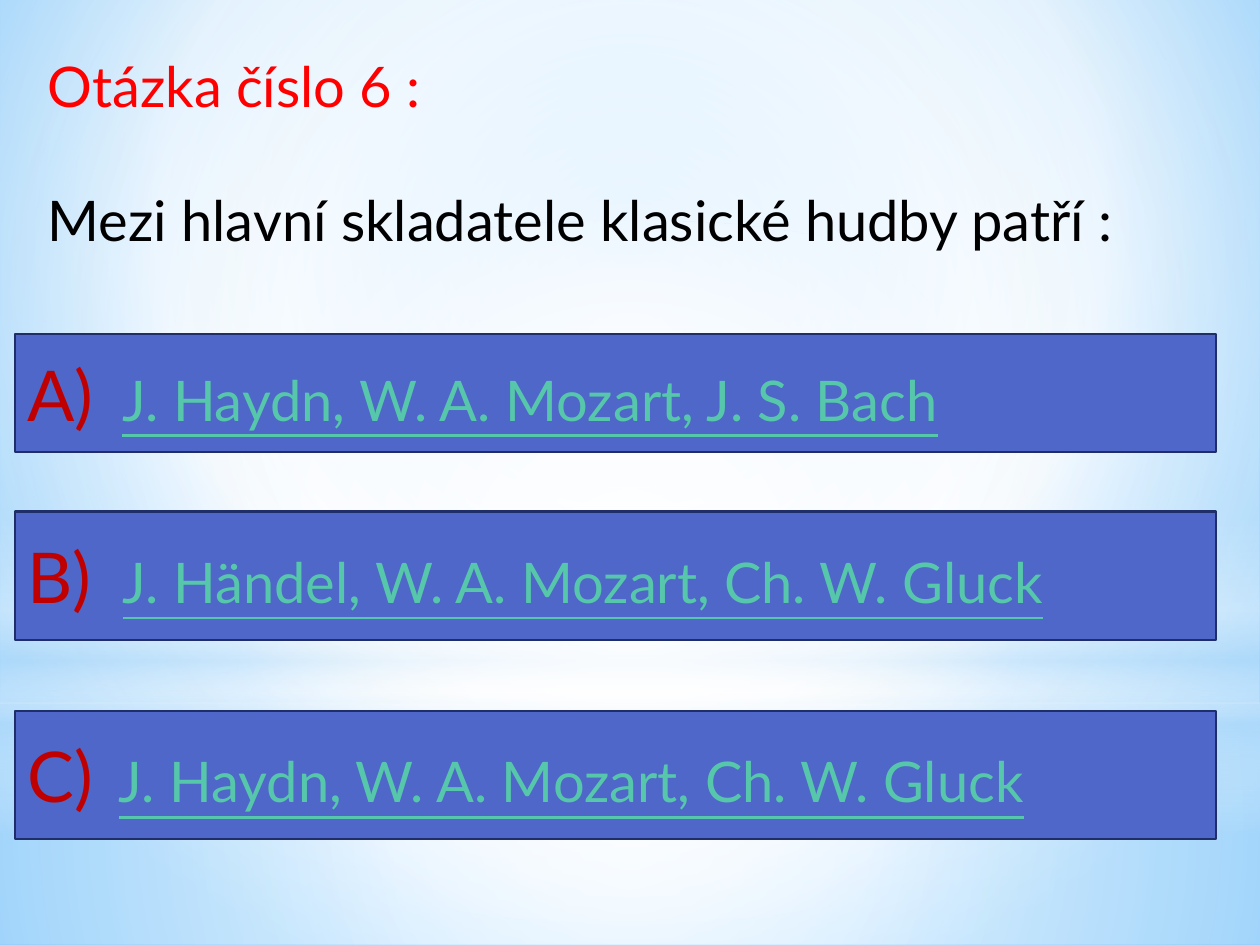
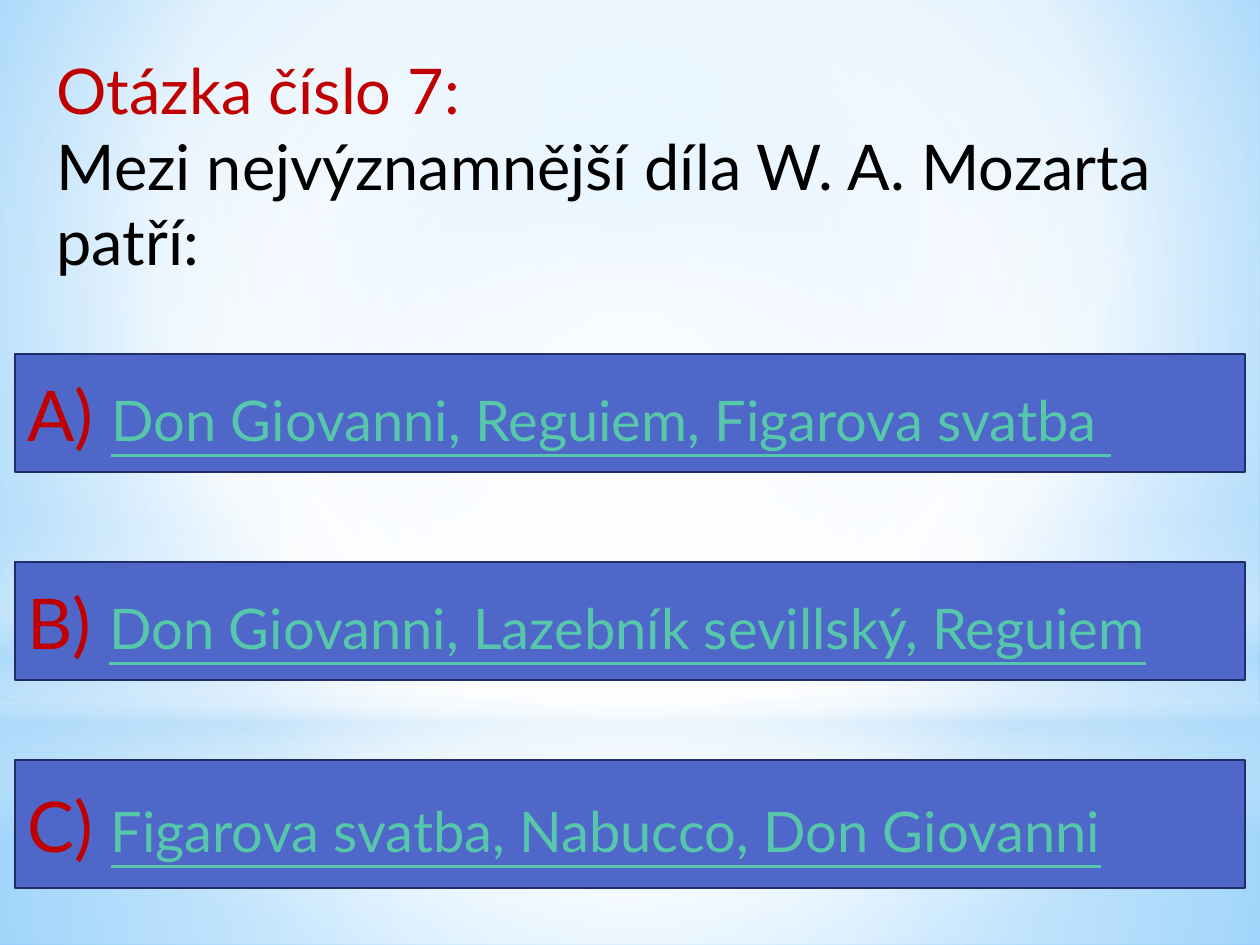
from dataclasses import dataclass
from typing import NamedTuple

from lxml.etree import SubElement
from pptx import Presentation
from pptx.dml.color import RGBColor
from pptx.enum.shapes import MSO_SHAPE as Preset
from pptx.enum.text import MSO_ANCHOR as Anchor, MSO_AUTO_SIZE as AutoSize, PP_ALIGN as Align
from pptx.oxml.ns import qn
from pptx.util import Pt

WHITE = RGBColor(0xFF, 0xFF, 0xFF)
BLACK = RGBColor(0x00, 0x00, 0x00)
RED = RGBColor(0xFF, 0x00, 0x00)
DARK_RED = RGBColor(0xC0, 0x00, 0x00)
BAR_BLUE = RGBColor(0x4E, 0x67, 0xC8)
BAR_EDGE = RGBColor(0x1F, 0x2E, 0x69)
LINK_GREEN = RGBColor(0x56, 0xC7, 0xAA)
SKY = RGBColor(0x9E, 0xD5, 0xFF)
DEEP_SKY = RGBColor(0x5B, 0xB9, 0xFF)
HAZE = RGBColor(0xB4, 0xDC, 0xFA)

FONT = "Lato"
PAGE_WIDTH, PAGE_HEIGHT = 720, 540
HORIZON = 401.76
BAR_LEFT = 8.64
LETTER_SIZE, ANSWER_SIZE = 40, 32


class Stop(NamedTuple):
    position: int
    color: RGBColor
    opacity: int = 100


class Frame(NamedTuple):
    left: float
    top: float
    width: float
    height: float


class Glow(NamedTuple):
    preset: Preset
    frame: Frame
    stops: list[Stop]
    radial: bool = True


@dataclass
class Answer:
    letter: str
    text: str
    top: float
    height: float
    extra_gap: float = 0


@dataclass
class Question:
    heading: str
    heading_color: RGBColor
    heading_gap: float
    prompt: str
    size: int
    frame: Frame
    bar_width: float
    answers: list[Answer]


CENTER = (50, 50, 50, 50)
BACKDROP = [Stop(0, SKY), Stop(60, WHITE), Stop(100, DEEP_SKY)]
GLOWS = [
    Glow(Preset.RECTANGLE, Frame(0, HORIZON, PAGE_WIDTH, PAGE_HEIGHT - HORIZON),
         [Stop(0, WHITE, 91), Stop(37, WHITE, 76), Stop(100, HAZE, 79)]),
    Glow(Preset.RECTANGLE, Frame(0, 0, PAGE_WIDTH, HORIZON),
         [Stop(0, WHITE, 89), Stop(48, WHITE, 62), Stop(100, HAZE, 79)]),
    Glow(Preset.RECTANGLE, Frame(0, 296.64, PAGE_WIDTH, 180),
         [Stop(0, WHITE, 0), Stop(29, WHITE, 30), Stop(45, HAZE, 40),
          Stop(55, WHITE, 26), Stop(65, HAZE, 60), Stop(100, WHITE, 0)], False),
    Glow(Preset.OVAL, Frame(0, 126, PAGE_WIDTH, HORIZON),
         [Stop(0, WHITE), Stop(56, WHITE, 0)]),
]

QUESTIONS = [
    Question("Otázka číslo 6 :", RED, 38.4,
             "Mezi hlavní skladatele klasické hudby patří :", 32,
             Frame(20.16, 25.92, 686.16, 123.84), 686.16, [
                 Answer("A)", "J. Haydn, W. A. Mozart, J. S. Bach", 190.8, 67.68, 6.2),
                 Answer("B)", "J. Händel, W. A. Mozart, Ch. W. Gluck", 292.32, 73.44, 7.7),
                 Answer("C)", "J. Haydn, W. A. Mozart, Ch. W. Gluck", 406.08, 73.44, 4.6),
             ]),
    Question("Otázka číslo 7:", DARK_RED, 0,
             "Mezi nejvýznamnější díla W. A. Mozarta patří:", 36,
             Frame(25.2, 25.92, 663.12, 138.24), 702.72, [
                 Answer("A)", "Don Giovanni, Reguiem, Figarova svatba ", 202.32, 67.68),
                 Answer("B)", "Don Giovanni, Lazebník sevillský, Reguiem", 321.12, 67.68),
                 Answer("C)", "Figarova svatba, Nabucco, Don Giovanni", 434.16, 73.44),
             ]),
]


def set_gradient(fill, owner, stops: list[Stop], focus: tuple | None) -> None:
    fill.gradient()
    gradient = next(owner.iter(qn("a:gradFill")))
    for child in list(gradient):
        gradient.remove(child)
    stop_list = SubElement(gradient, qn("a:gsLst"))
    for stop in stops:
        mark = SubElement(stop_list, qn("a:gs"), pos=str(stop.position * 1000))
        color = SubElement(mark, qn("a:srgbClr"), val=str(stop.color))
        if stop.opacity < 100:
            SubElement(color, qn("a:alpha"), val=str(stop.opacity * 1000))
    if focus:
        circle = SubElement(gradient, qn("a:path"), {"path": "circle"})
        sides = {side: str(share * 1000) for side, share in zip("ltrb", focus)}
        SubElement(circle, qn("a:fillToRect"), sides)
    else:
        SubElement(gradient, qn("a:lin"), ang="5400000", scaled="0")


def add_preset(page, preset: Preset, frame: Frame):
    shape = page.shapes.add_shape(preset, *map(Pt, frame))
    shape.shadow.inherit = False
    return shape


def add_span(para, text: str, size: float, color: RGBColor, underline: bool = False):
    span = para.add_run()
    span.text = text
    span.font.name = FONT
    span.font.size = Pt(size)
    span.font.color.rgb = color
    if underline:
        span.font.underline = True
    return span


def draw_backdrop(page) -> None:
    set_gradient(page.background.fill, page.element, BACKDROP, (20, 10, 20, 60))
    for glow in GLOWS:
        shape = add_preset(page, glow.preset, glow.frame)
        set_gradient(shape.fill, shape.element, glow.stops, CENTER if glow.radial else None)
        shape.line.fill.background()


def draw_prompt(page, question: Question) -> None:
    box = page.shapes.add_textbox(*map(Pt, question.frame))
    frame = box.text_frame
    frame.word_wrap = True
    frame.auto_size = AutoSize.SHAPE_TO_FIT_TEXT
    heading = frame.paragraphs[0]
    heading.space_after = Pt(question.heading_gap)
    add_span(heading, question.heading, question.size, question.heading_color)
    add_span(frame.add_paragraph(), question.prompt, question.size, BLACK)


def draw_answer(page, answer: Answer, width: float) -> None:
    bar = add_preset(page, Preset.RECTANGLE, Frame(BAR_LEFT, answer.top, width, answer.height))
    bar.fill.solid()
    bar.fill.fore_color.rgb = BAR_BLUE
    bar.line.color.rgb = BAR_EDGE
    bar.line.width = Pt(1.25)
    frame = bar.text_frame
    frame.word_wrap = True
    frame.vertical_anchor = Anchor.MIDDLE
    para = frame.paragraphs[0]
    para.alignment = Align.LEFT
    add_span(para, answer.letter, LETTER_SIZE, DARK_RED)
    gap = add_span(para, " ", LETTER_SIZE, DARK_RED)
    gap.font._element.set("spc", str(round(answer.extra_gap * 100)))
    add_span(para, answer.text, ANSWER_SIZE, LINK_GREEN, underline=True)


def main() -> None:
    deck = Presentation()
    deck.slide_width, deck.slide_height = Pt(PAGE_WIDTH), Pt(PAGE_HEIGHT)
    for question in QUESTIONS:
        page = deck.slides.add_slide(deck.slide_layouts[6])
        draw_backdrop(page)
        draw_prompt(page, question)
        for answer in question.answers:
            draw_answer(page, answer, question.bar_width)
    deck.save("out.pptx")


if __name__ == "__main__":
    main()
